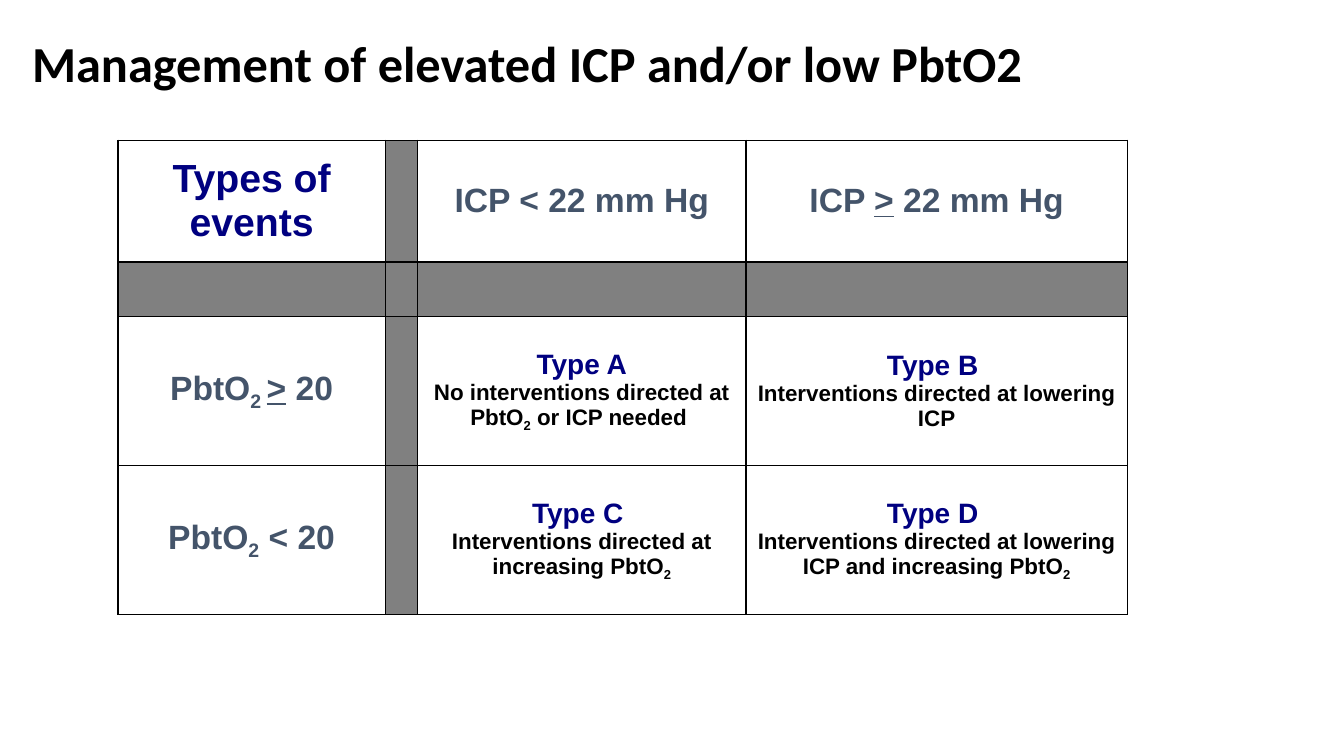
from dataclasses import dataclass

import lxml.etree
import pptx
import pptx.dml.color
import pptx.enum.text
import pptx.oxml.ns
import pptx.util

Inches = pptx.util.Inches


@dataclass(frozen=True)
class Theme:
    title_font: str = "Calibri"
    table_font: str = "Arial"
    black: str = "000000"
    white: str = "FFFFFF"
    gray: str = "808080"
    navy: str = "000080"
    slate: str = "44546A"
    title_size: int = 36
    corner_size: int = 28
    header_size: int = 24
    type_size: int = 20
    detail_size: int = 16
    border_width: float = 1


def rgb(color):
    return pptx.dml.color.RGBColor.from_string(color)


def add_run(paragraph, text, *, font, size, color, subscript=False, underline=False):
    run = paragraph.add_run()
    run.text = text
    run.font.name = font
    run.font.size = pptx.util.Pt(size)
    run.font.color.rgb = rgb(color)
    run.font.bold = True
    if underline:
        run.font.underline = True
    if subscript:
        run.font._element.set("baseline", "-25000")


class SlideBuilder:
    def __init__(self, slide, theme):
        self.slide = slide
        self.theme = theme

    def add_title(self, text, left, top, width, height):
        box = self.slide.shapes.add_textbox(
            Inches(left), Inches(top), Inches(width), Inches(height))
        frame = box.text_frame
        frame.word_wrap = True
        frame.vertical_anchor = pptx.enum.text.MSO_ANCHOR.MIDDLE
        paragraph = frame.paragraphs[0]
        paragraph.line_spacing = 0.9
        add_run(paragraph, text, font=self.theme.title_font,
                size=self.theme.title_size, color=self.theme.black)

    def add_table(self, rows, left, top, column_widths, row_heights):
        """Draw rows of cells; a cell is a list of paragraphs, or None for a gray divider."""
        table = self.slide.shapes.add_table(
            len(row_heights), len(column_widths), Inches(left), Inches(top),
            Inches(sum(column_widths)), Inches(sum(row_heights))).table
        table.first_row = False
        table.horz_banding = False
        for column, width in zip(table.columns, column_widths):
            column.width = Inches(width)
        for row, height, contents in zip(table.rows, row_heights, rows):
            row.height = Inches(height)
            for cell, content in zip(row.cells, contents):
                self.fill_cell(cell, content)

    def fill_cell(self, cell, content):
        self.add_borders(cell)
        cell.fill.solid()
        cell.fill.fore_color.rgb = rgb(self.theme.white if content else self.theme.gray)
        cell.vertical_anchor = pptx.enum.text.MSO_ANCHOR.MIDDLE
        for index, (size, color, pieces) in enumerate(content or []):
            frame = cell.text_frame
            paragraph = frame.add_paragraph() if index else frame.paragraphs[0]
            paragraph.alignment = pptx.enum.text.PP_ALIGN.CENTER
            for text, marks in pieces:
                add_run(paragraph, text, font=self.theme.table_font,
                        size=size, color=color, **marks)

    def add_borders(self, cell):
        qn = pptx.oxml.ns.qn
        properties = cell._tc.get_or_add_tcPr()
        width = str(int(pptx.util.Pt(self.theme.border_width)))
        for side in ("lnL", "lnR", "lnT", "lnB"):
            line = lxml.etree.SubElement(properties, qn(f"a:{side}"), w=width)
            fill = lxml.etree.SubElement(line, qn("a:solidFill"))
            lxml.etree.SubElement(fill, qn("a:srgbClr"), val=self.theme.black)


def plain(text):
    return text, {}


def subscript(text):
    return text, {"subscript": True}


def underlined(text):
    return text, {"underline": True}


def header(theme, *pieces):
    return [(theme.header_size, theme.slate, pieces)]


def event_type(theme, name, *pieces):
    return [(theme.type_size, theme.navy, [plain(name)]),
            (theme.detail_size, theme.black, pieces)]


def main():
    presentation = pptx.Presentation()
    presentation.slide_width = Inches(13.33)
    presentation.slide_height = Inches(7.5)
    theme = Theme()
    slide = presentation.slides.add_slide(presentation.slide_layouts[6])
    builder = SlideBuilder(slide, theme)

    divider = None
    event_rows = [
        [[(theme.corner_size, theme.navy, [plain("Types of events")])],
         divider,
         header(theme, plain("ICP < 22 mm Hg")),
         header(theme, plain("ICP "), underlined(">"), plain(" 22 mm Hg"))],
        [divider] * 4,
        [header(theme, plain("PbtO"), subscript("2 "), underlined(">"), plain(" 20")),
         divider,
         event_type(theme, "Type A", plain("No interventions directed at PbtO"),
                    subscript("2"), plain(" or ICP needed ")),
         event_type(theme, "Type B ", plain("Interventions directed at lowering ICP"))],
        [header(theme, plain("PbtO"), subscript("2"), plain(" < 20")),
         divider,
         event_type(theme, "Type C ", plain("Interventions directed at increasing PbtO"),
                    subscript("2")),
         event_type(theme, "Type D ",
                    plain("Interventions directed at lowering ICP and increasing PbtO"),
                    subscript("2"))],
    ]
    builder.add_table(event_rows, 1.17, 1.39,
                      column_widths=[2.65, 0.32, 3.26, 3.78],
                      row_heights=[1.21, 0.54, 1.48, 1.48])
    builder.add_title("Management of elevated ICP and/or low PbtO2", 0.22, 0.15, 11.5, 1.02)
    presentation.save("out.pptx")


if __name__ == "__main__":
    main()
